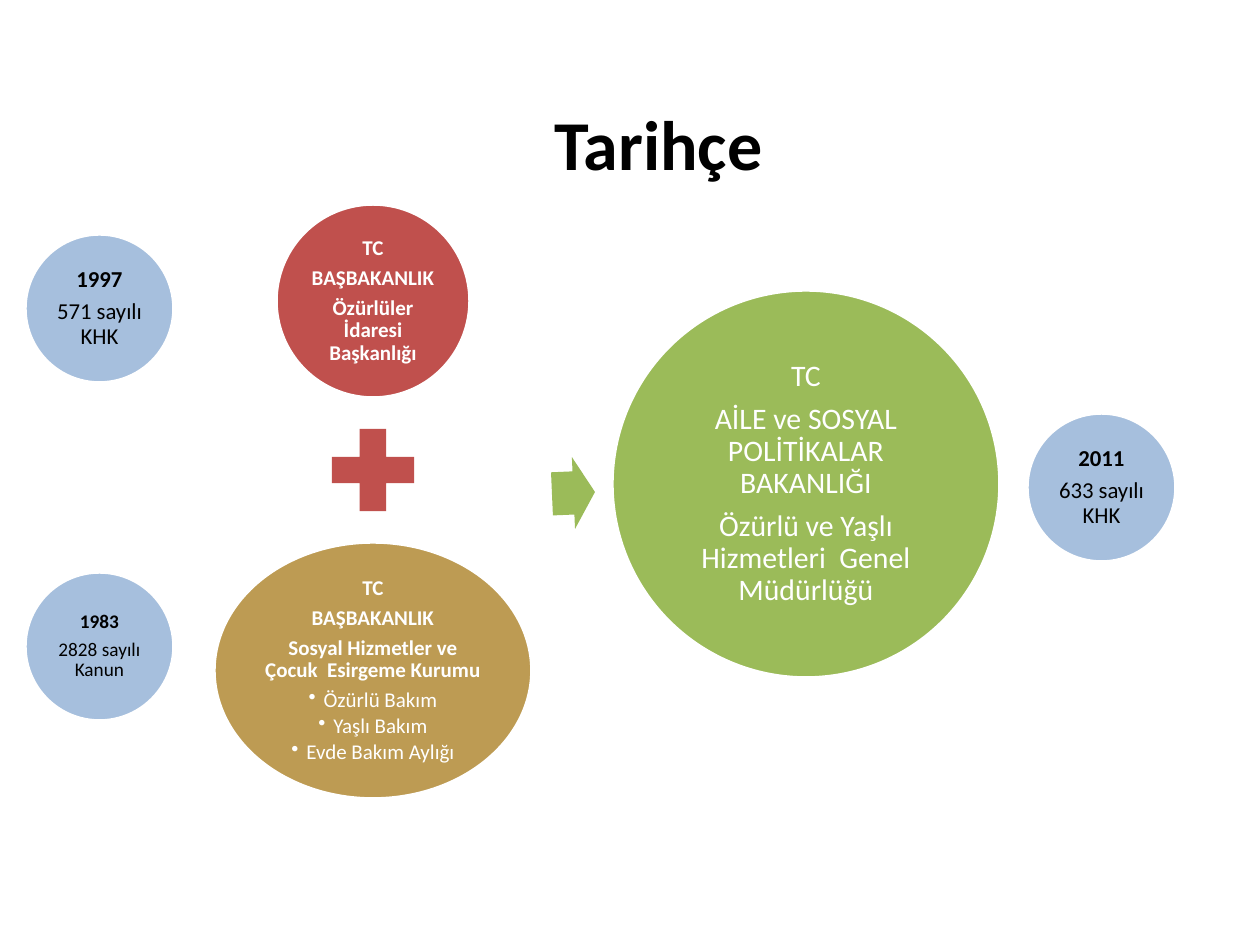
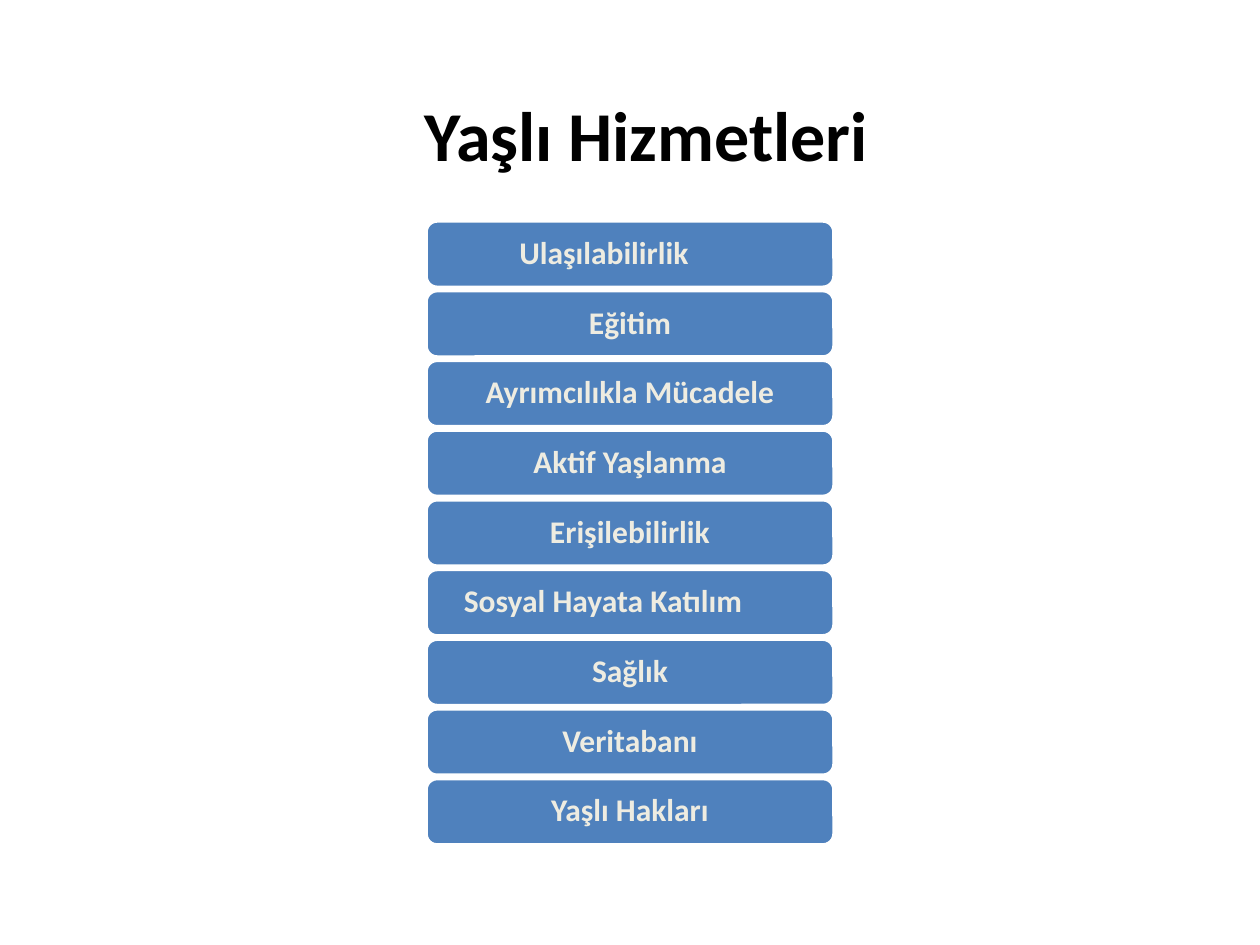
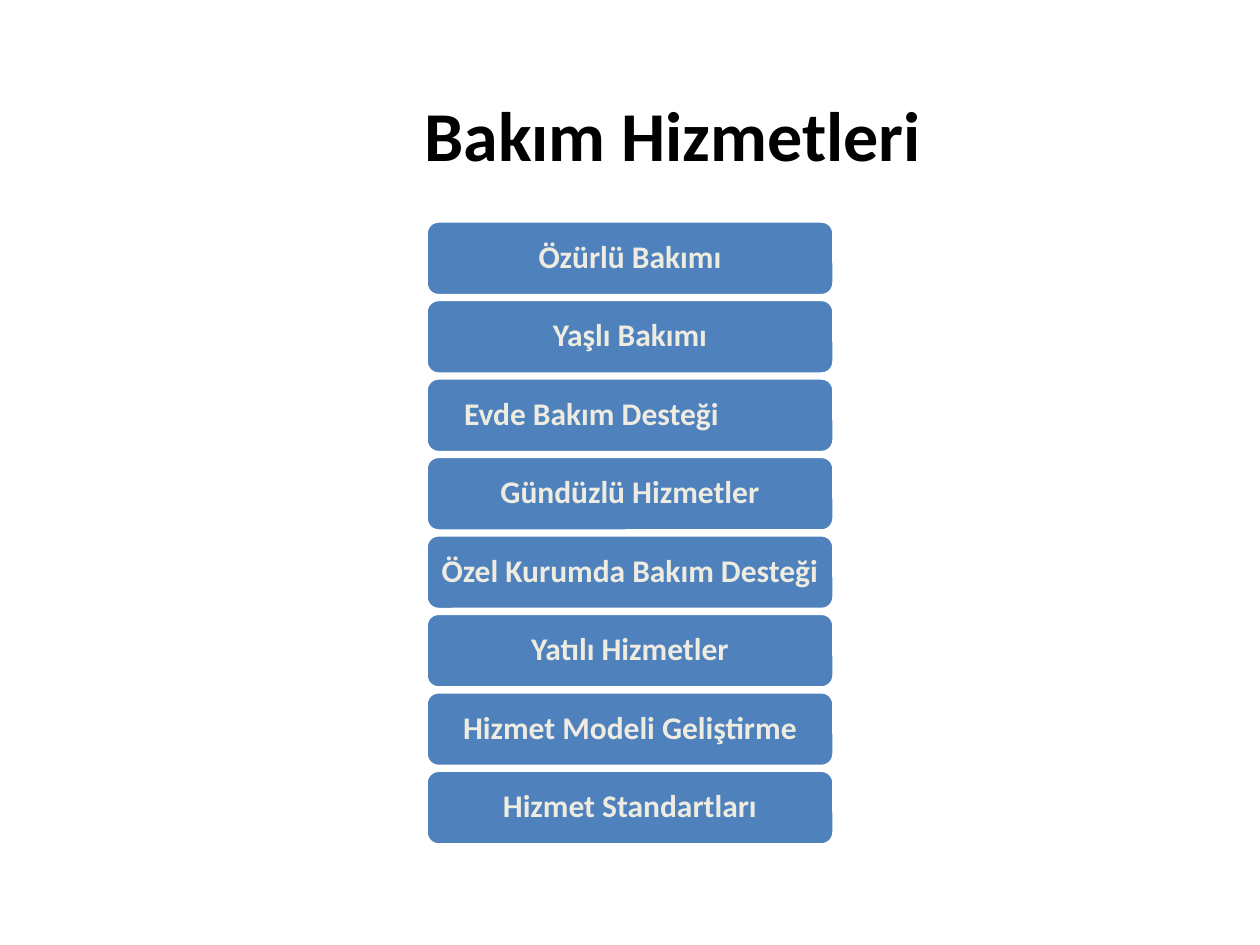
from dataclasses import dataclass

from lxml.etree import SubElement
from pptx import Presentation
from pptx.dml.color import RGBColor
from pptx.enum.shapes import MSO_SHAPE as Preset
from pptx.enum.text import MSO_ANCHOR as Anchor, PP_ALIGN as Align
from pptx.oxml.ns import qn
from pptx.shapes.autoshape import Shape
from pptx.slide import Slide
from pptx.text.text import TextFrame
from pptx.util import Emu, Inches, Pt

PX_PER_INCH = 126
FONT = "Calibri"
BLACK, WHITE, CREAM = "000000", "FFFFFF", "EEECE1"
BLUE, RED, GREEN, GOLD = "4F81BD", "C0504D", "9BBB59", "BD9B53"
TITLE_SIZE, BAR_SIZE = 40, 18
LINE_SPACING, PARAGRAPH_GAP, BULLET_GAP = 0.9, 0.35, 0.15
BULLET_INDENT = 15
STACK_LEFT, STACK_TOP, STACK_WIDTH, STACK_HEIGHT = 426, 221, 408, 624
STACK_GAP_RATIO = 0.05
TITLE_ONLY_LAYOUT = 5


@dataclass(frozen=True)
class Box:
    left: int
    top: int
    width: int
    height: int


@dataclass(frozen=True)
class Line:
    text: str
    bold: bool = False
    bullet: bool = False


@dataclass(frozen=True)
class Oval:
    box: Box
    fill: str
    size: int
    lines: tuple[Line, ...]
    color: str = WHITE
    side_inset: int = 3
    opacity: int = 100


@dataclass(frozen=True)
class Bar:
    """A service in a stack; right_room pushes its centred label to the left."""
    label: str
    right_room: int = 0


def px(length: float) -> Emu:
    return Inches(length / PX_PER_INCH)


def rgb(color: str) -> RGBColor:
    return RGBColor.from_string(color)


def law(year: str, decree: str, left: int, top: int, size: int = 13) -> Oval:
    """A pale circle that dates a law."""
    return Oval(Box(left, top, 149, 149), BLUE, size,
                (Line(year, bold=True), Line(decree)), BLACK, 8, 50)


HISTORY_OVALS = (
    Oval(Box(276, 204, 194, 194), RED, 12, (
        Line("TC", bold=True),
        Line("BAŞBAKANLIK", bold=True),
        Line("Özürlüler İdaresi Başkanlığı", bold=True),
    )),
    Oval(Box(214, 542, 318, 257), GOLD, 12, (
        Line("TC", bold=True),
        Line("BAŞBAKANLIK", bold=True),
        Line("Sosyal Hizmetler ve Çocuk  Esirgeme Kurumu", bold=True),
        Line("Özürlü Bakım", bullet=True),
        Line("Yaşlı Bakım", bullet=True),
        Line("Evde Bakım Aylığı", bullet=True),
    )),
    Oval(Box(612, 290, 388, 388), GREEN, 17, (
        Line("TC"),
        Line("AİLE ve SOSYAL POLİTİKALAR BAKANLIĞI"),
        Line("Özürlü ve Yaşlı Hizmetleri  Genel Müdürlüğü"),
    )),
    law("2011", "633 sayılı KHK", 1027, 413),
    law("1997", "571 sayılı KHK", 25, 234),
    law("1983", "2828 sayılı Kanun", 25, 572, 11),
)

ELDERLY_SERVICES = (
    Bar("Ulaşılabilirlik", 52),
    Bar("Eğitim"),
    Bar("Ayrımcılıkla Mücadele"),
    Bar("Aktif Yaşlanma"),
    Bar("Erişilebilirlik"),
    Bar("Sosyal Hayata Katılım", 54),
    Bar("Sağlık"),
    Bar("Veritabanı"),
    Bar("Yaşlı Hakları"),
)

CARE_SERVICES = (
    Bar("Özürlü Bakımı"),
    Bar("Yaşlı Bakımı"),
    Bar("Evde Bakım Desteği", 77),
    Bar("Gündüzlü Hizmetler"),
    Bar("Özel Kurumda Bakım Desteği"),
    Bar("Yatılı Hizmetler"),
    Bar("Hizmet Modeli Geliştirme"),
    Bar("Hizmet Standartları"),
)


def add_titled_slide(deck: Presentation, text: str, box: Box) -> Slide:
    slide = deck.slides.add_slide(deck.slide_layouts[TITLE_ONLY_LAYOUT])
    title = slide.shapes.title
    title.left, title.top = px(box.left), px(box.top)
    title.width, title.height = px(box.width), px(box.height)
    title.text_frame.vertical_anchor = Anchor.MIDDLE
    paragraph = title.text_frame.paragraphs[0]
    paragraph.alignment = Align.LEFT
    add_run(paragraph, text, TITLE_SIZE, BLACK, True)
    return slide


def add_run(paragraph, text: str, size: int, color: str, bold: bool) -> None:
    run = paragraph.add_run()
    run.text = text
    run.font.name = FONT
    run.font.size = Pt(size)
    run.font.bold = bold
    run.font.color.rgb = rgb(color)


def add_bullet(paragraph) -> None:
    paragraph.level = 1
    properties = paragraph._p.get_or_add_pPr()
    properties.set("marL", str(px(BULLET_INDENT)))
    properties.set("indent", str(-px(BULLET_INDENT)))
    SubElement(properties, qn("a:buChar"), char="•")


def add_preset(slide: Slide, preset: Preset, left: float, top: float, width: float,
               height: float, fill: str, outlined: bool = True) -> Shape:
    shape = slide.shapes.add_shape(preset, px(left), px(top), px(width), px(height))
    shape.shadow.inherit = False
    shape.fill.solid()
    shape.fill.fore_color.rgb = rgb(fill)
    if outlined:
        shape.line.color.rgb = rgb(WHITE)
        shape.line.width = Pt(2)
    else:
        shape.line.fill.background()
    return shape


def set_opacity(shape: Shape, percent: int) -> None:
    color = shape._element.spPr.find(qn("a:solidFill")).find(qn("a:srgbClr"))
    SubElement(color, qn("a:alpha"), val=str(percent * 1000))


def set_insets(frame: TextFrame, left: int, right: int, vertical: int) -> None:
    frame.margin_left, frame.margin_right = px(left), px(right)
    frame.margin_top = frame.margin_bottom = px(vertical)


def write_lines(frame: TextFrame, lines: tuple[Line, ...], size: int, color: str) -> None:
    frame.word_wrap = True
    frame.vertical_anchor = Anchor.MIDDLE
    for index, line in enumerate(lines):
        paragraph = frame.add_paragraph() if index else frame.paragraphs[0]
        if line.bullet:
            add_bullet(paragraph)
        paragraph.alignment = Align.CENTER
        paragraph.line_spacing = LINE_SPACING
        paragraph.space_before = Pt(0)
        paragraph.space_after = Pt(size * (BULLET_GAP if line.bullet else PARAGRAPH_GAP))
        add_run(paragraph, line.text, size, color, line.bold)


def draw_oval(slide: Slide, oval: Oval) -> None:
    box = oval.box
    shape = add_preset(slide, Preset.OVAL, box.left, box.top, box.width, box.height, oval.fill)
    if oval.opacity < 100:
        set_opacity(shape, oval.opacity)
    set_insets(shape.text_frame, oval.side_inset, oval.side_inset, 2)
    write_lines(shape.text_frame, oval.lines, oval.size, oval.color)


def draw_stack(slide: Slide, bars: tuple[Bar, ...]) -> None:
    """Fill the stack's fixed height with equal bars and equal gaps."""
    height = STACK_HEIGHT / (len(bars) + STACK_GAP_RATIO * (len(bars) - 1))
    pitch = height * (1 + STACK_GAP_RATIO)
    for row, bar in enumerate(bars):
        shape = add_preset(slide, Preset.ROUNDED_RECTANGLE, STACK_LEFT,
                           STACK_TOP + row * pitch, STACK_WIDTH, height, BLUE)
        set_insets(shape.text_frame, 9, 9 + bar.right_room, 5)
        write_lines(shape.text_frame, (Line(bar.label, bold=True),), BAR_SIZE, CREAM)


def draw_history(deck: Presentation) -> None:
    slide = add_titled_slide(deck, "Tarihçe", Box(542, 78, 510, 129))
    for oval in HISTORY_OVALS:
        draw_oval(slide, oval)
    add_preset(slide, Preset.MATH_PLUS, 317, 414, 112, 112, RED, outlined=False)
    merger = add_preset(slide, Preset.RIGHT_ARROW, 552, 457, 43, 72, GREEN, outlined=False)
    merger.adjustments[0], merger.adjustments[1] = 0.6, 0.5
    merger.rotation = 357.5


def main() -> None:
    deck = Presentation()
    deck.slide_width, deck.slide_height = px(1260), px(945)
    draw_history(deck)
    for title, bars in (("Yaşlı Hizmetleri", ELDERLY_SERVICES),
                        ("Bakım Hizmetleri", CARE_SERVICES)):
        draw_stack(add_titled_slide(deck, title, Box(412, 66, 793, 136)), bars)
    deck.save("out.pptx")


if __name__ == "__main__":
    main()
